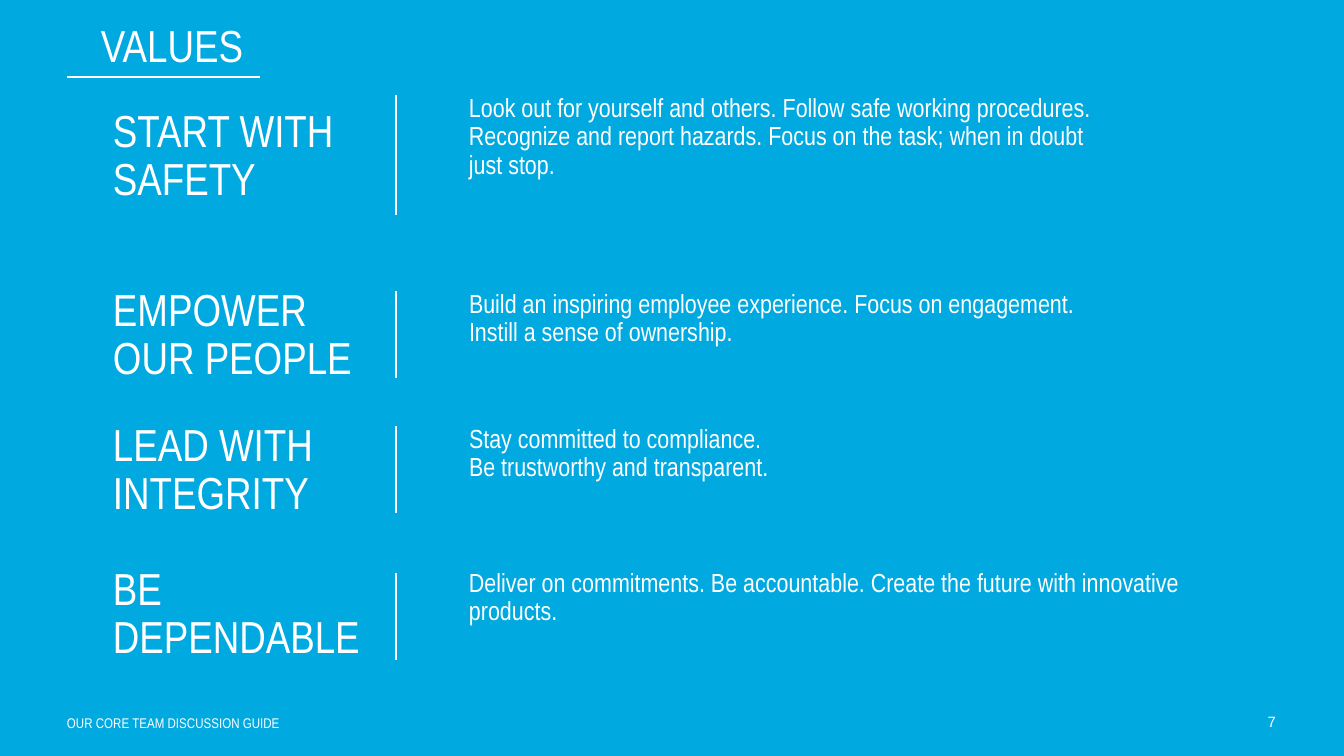
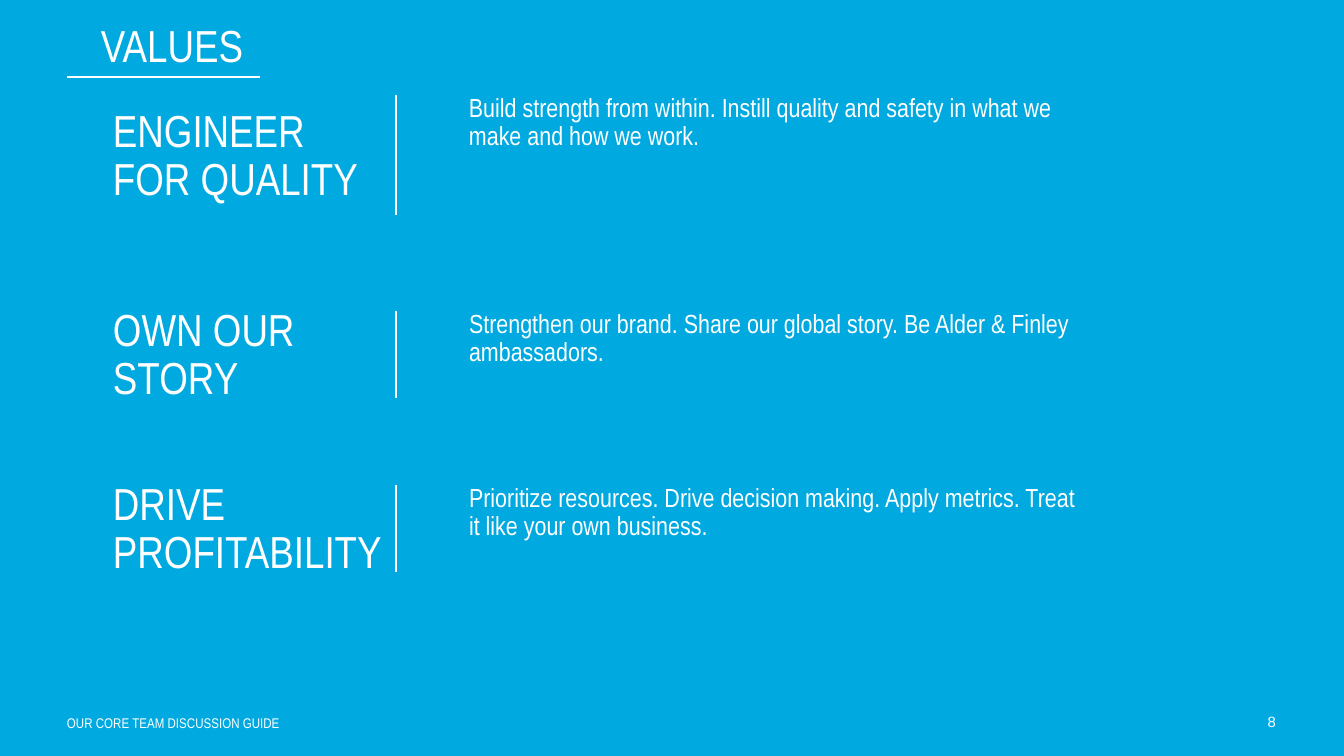
from pptx import Presentation
from pptx import util as u
from pptx.dml.color import RGBColor
from pptx.enum import shapes, text
from pptx.oxml.ns import qn
from lxml import etree

SCALE = 914400 / 134.4
BLUE = RGBColor(0x00, 0xA9, 0xE0)
WHITE = RGBColor(0xFF, 0xFF, 0xFF)
NARROW = "Arial Narrow"
HEAD = {"size": u.Pt(24), "name": NARROW}
BODY = {"size": u.Pt(14), "name": NARROW}
FOOT = {"size": u.Pt(7.5), "name": NARROW}
PAGE = {"size": u.Pt(8), "name": "Arial"}
MID = text.MSO_ANCHOR.MIDDLE
TOP = text.MSO_ANCHOR.TOP
LEFT, CENTER, RIGHT = (text.PP_ALIGN.LEFT, text.PP_ALIGN.CENTER,
                       text.PP_ALIGN.RIGHT)

# Each row: top, label height, rule offset, rule length, body size, label, body
VALUES = {
    7: [
        (95, 124, 0, 120, (628, 151), "START WITH\nSAFETY",
         "Look out for yourself and others. Follow safe working procedures. "
         "Recognize and report hazards. Focus on the task; when in doubt "
         "just stop."),
        (291, 90, 0, 87, (624, 106), "EMPOWER\nOUR PEOPLE",
         "Build an inspiring employee experience. Focus on engagement. "
         "Instill a sense of ownership."),
        (426, 90, 0, 87, (617, 90), "LEAD WITH INTEGRITY",
         "Stay committed to compliance.\nBe trustworthy and transparent."),
        (570, 90, 3, 87, (732, 90), "BE DEPENDABLE",
         "Deliver on commitments. Be accountable. Create the future with "
         "innovative products."),
    ],
    8: [
        (95, 124, 0, 120, (628, 151), "ENGINEER\nFOR QUALITY",
         "Build strength from within. Instill quality and safety in what we "
         "make and how we work."),
        (311, 90, 0, 87, (624, 106), "OWN OUR\nSTORY",
         "Strengthen our brand. Share our global story. "
         "Be Alder & Finley ambassadors."),
        (485, 90, 0, 87, (617, 90), "DRIVE\nPROFITABILITY",
         "Prioritize resources. Drive decision making. Apply metrics. "
         "Treat it like your own business."),
    ],
}


def px(n):
    return u.Emu(round(n * SCALE))


def write(slide, box, words, font, anchor=TOP, align=LEFT, lead=0.9, inset=0):
    frame = slide.shapes.add_textbox(*map(px, box)).text_frame
    form = {"margin_left": 0, "margin_right": 0, "margin_top": px(inset),
            "margin_bottom": 0, "word_wrap": True, "vertical_anchor": anchor}
    for key, val in form.items():
        setattr(frame, key, val)
    para = frame.paragraphs[0]
    para.text = words
    para.alignment = align
    para.line_spacing = lead
    for run in para.runs:
        for key, val in font.items():
            setattr(run.font, key, val)
        run.font.color.rgb = WHITE


def rule(slide, *ends):
    line = slide.shapes.add_connector(shapes.MSO_CONNECTOR.STRAIGHT,
                                      *map(px, ends))
    line.line.color.rgb = WHITE
    line.line.width = u.Pt(1)
    etree.SubElement(line._element.spPr, qn("a:effectLst"))


def title(slide, x, y, w, h):
    write(slide, (x, y, w, h), "VALUES", HEAD, MID, CENTER)
    rule(slide, x + 67, y + 77, x + 260, y + 77)


def footer(slide, x, y, w, h, page):
    write(slide, (x, y, 585, h), "OUR CORE TEAM DISCUSSION GUIDE", FOOT,
          lead=1.0, inset=3)
    write(slide, (x + w - 67, y, 67, h), str(page), PAGE,
          align=RIGHT, lead=1.0, inset=1)


def value(slide, x, y, high, shift, length, size, label, body):
    """Place a label, its upright rule and its explanation from (x, y)."""
    write(slide, (x, y, 294, high), label, HEAD, MID)
    rule(slide, x + 283, y + shift, x + 283, y + shift + length)
    write(slide, (x + 356, y, *size), body, BODY)


def build(deck, page, rows):
    slide = deck.slides.add_slide(deck.slide_layouts[6])
    fill = slide.background.fill
    fill.solid()
    fill.fore_color.rgb = BLUE
    footer(slide, 67, 712, 1209, 27, page)
    for row in rows:
        value(slide, 113, *row)
    title(slide, 0, 0, 344, 95)


def main():
    deck = Presentation()
    deck.slide_width, deck.slide_height = px(1344), px(756)
    for page, rows in VALUES.items():
        build(deck, page, rows)
    deck.save("out.pptx")


if __name__ == "__main__":
    main()
